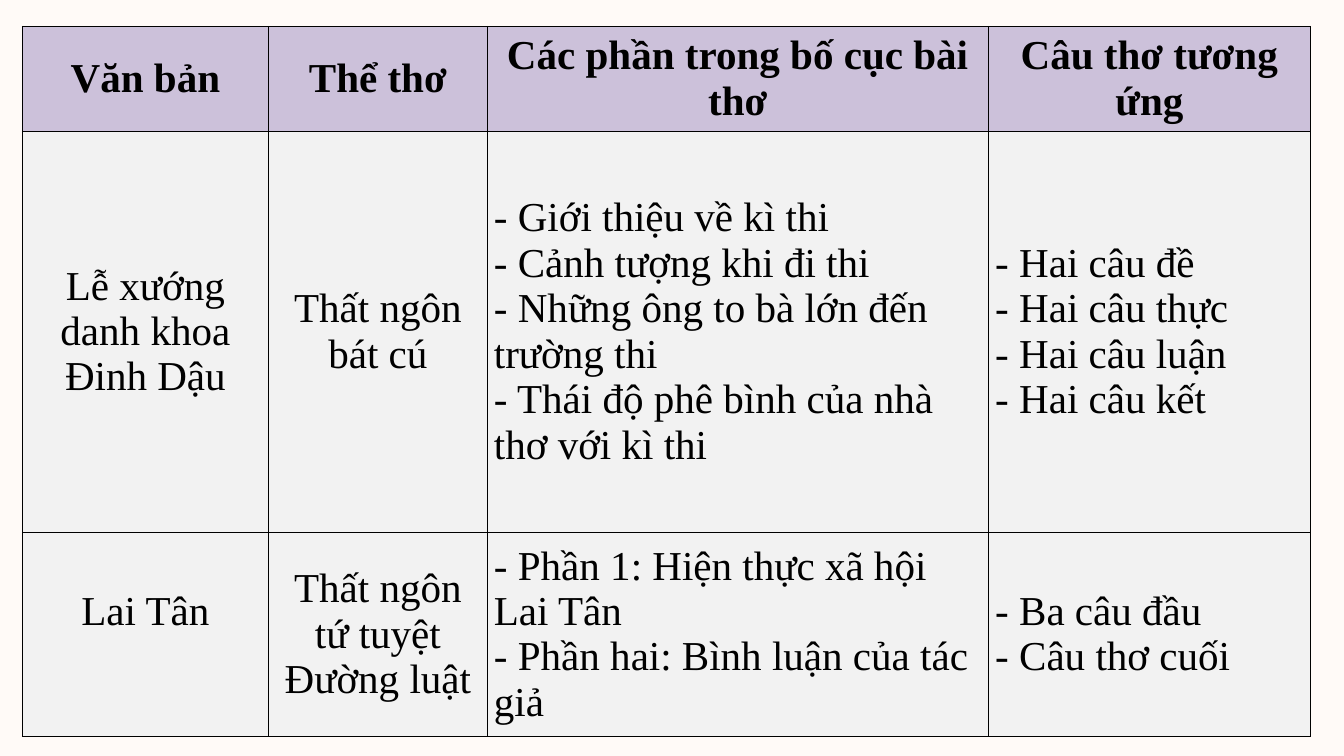
from dataclasses import dataclass

from lxml.etree import SubElement
from pptx import Presentation
from pptx.dml.color import RGBColor
from pptx.enum.text import MSO_ANCHOR, PP_ALIGN
from pptx.oxml.ns import qn
from pptx.util import Inches, Pt


@dataclass(frozen=True)
class Theme:
    font: str = "Times New Roman"
    text_size: int = 44
    border_width: int = 1
    background: str = "FFFAF7"
    header_fill: str = "CCC1DA"
    body_fill: str = "F2F2F2"
    ink: str = "000000"


THEME = Theme()
COLUMN_WIDTHS = (3.67, 3.25, 7.46, 4.79)
ROW_HEIGHTS = (1.56, 5.97, 3.04)
LIST_COLUMNS = (2, 3)

# One row of the table per entry; each cell is a list of paragraphs.
ROWS = (
    (
        ["Văn bản"],
        ["Thể thơ"],
        ["Các phần trong bố cục bài thơ"],
        ["Câu thơ tương ứng"],
    ),
    (
        ["Lễ xướng danh khoa Đinh Dậu"],
        ["Thất ngôn bát cú"],
        [
            "- Giới thiệu về kì thi",
            "- Cảnh tượng khi đi thi",
            "- Những ông to bà lớn đến trường thi",
            "- Thái độ phê bình của nhà thơ với kì thi",
        ],
        ["- Hai câu đề", "- Hai câu thực", "- Hai câu luận", "- Hai câu kết"],
    ),
    (
        ["Lai Tân"],
        ["Thất ngôn tứ tuyệt Đường luật"],
        ["- Phần 1: Hiện thực xã hội Lai Tân", "- Phần hai: Bình luận của tác giả"],
        ["- Ba câu đầu", "- Câu thơ cuối"],
    ),
)


def set_borders(cell):
    properties = cell._tc.get_or_add_tcPr()
    for side in ("a:lnL", "a:lnR", "a:lnT", "a:lnB"):
        line = SubElement(properties, qn(side), w=str(Pt(THEME.border_width)))
        fill = SubElement(line, qn("a:solidFill"))
        SubElement(fill, qn("a:srgbClr"), val=THEME.ink)


def write_paragraphs(text_frame, lines, alignment, bold):
    for index, line in enumerate(lines):
        paragraph = text_frame.paragraphs[0] if index == 0 else text_frame.add_paragraph()
        paragraph.alignment = alignment
        run = paragraph.add_run()
        run.text = line
        run.font.name = THEME.font
        run.font.size = Pt(THEME.text_size)
        run.font.bold = bold
        run.font.color.rgb = RGBColor.from_string(THEME.ink)


def fill_cell(cell, lines, is_header, is_list):
    set_borders(cell)
    cell.fill.solid()
    color = THEME.header_fill if is_header else THEME.body_fill
    cell.fill.fore_color.rgb = RGBColor.from_string(color)
    cell.vertical_anchor = MSO_ANCHOR.MIDDLE
    cell.margin_left = cell.margin_right = Inches(0.1)
    cell.margin_top = cell.margin_bottom = Inches(0.05)
    alignment = PP_ALIGN.LEFT if is_list else PP_ALIGN.CENTER
    write_paragraphs(cell.text_frame, lines, alignment, is_header)


def add_poem_table(slide):
    frame = slide.shapes.add_table(
        len(ROWS), len(COLUMN_WIDTHS), Inches(0.33), Inches(0.39),
        Inches(sum(COLUMN_WIDTHS)), Inches(sum(ROW_HEIGHTS)),
    )
    table = frame.table
    table.horz_banding = False
    for column, width in zip(table.columns, COLUMN_WIDTHS):
        column.width = Inches(width)
    for row, height in zip(table.rows, ROW_HEIGHTS):
        row.height = Inches(height)
    for row_index, row in enumerate(ROWS):
        is_header = row_index == 0
        for column_index, lines in enumerate(row):
            is_list = not is_header and column_index in LIST_COLUMNS
            fill_cell(table.cell(row_index, column_index), lines, is_header, is_list)
    # The last poem's name sits half a line above the middle of its cell.
    table.cell(2, 0).margin_bottom = Inches(0.73)


def main():
    presentation = Presentation()
    presentation.slide_width = Inches(20)
    presentation.slide_height = Inches(11.25)
    slide = presentation.slides.add_slide(presentation.slide_layouts[6])
    slide.background.fill.solid()
    slide.background.fill.fore_color.rgb = RGBColor.from_string(THEME.background)
    add_poem_table(slide)
    presentation.save("out.pptx")


if __name__ == "__main__":
    main()
